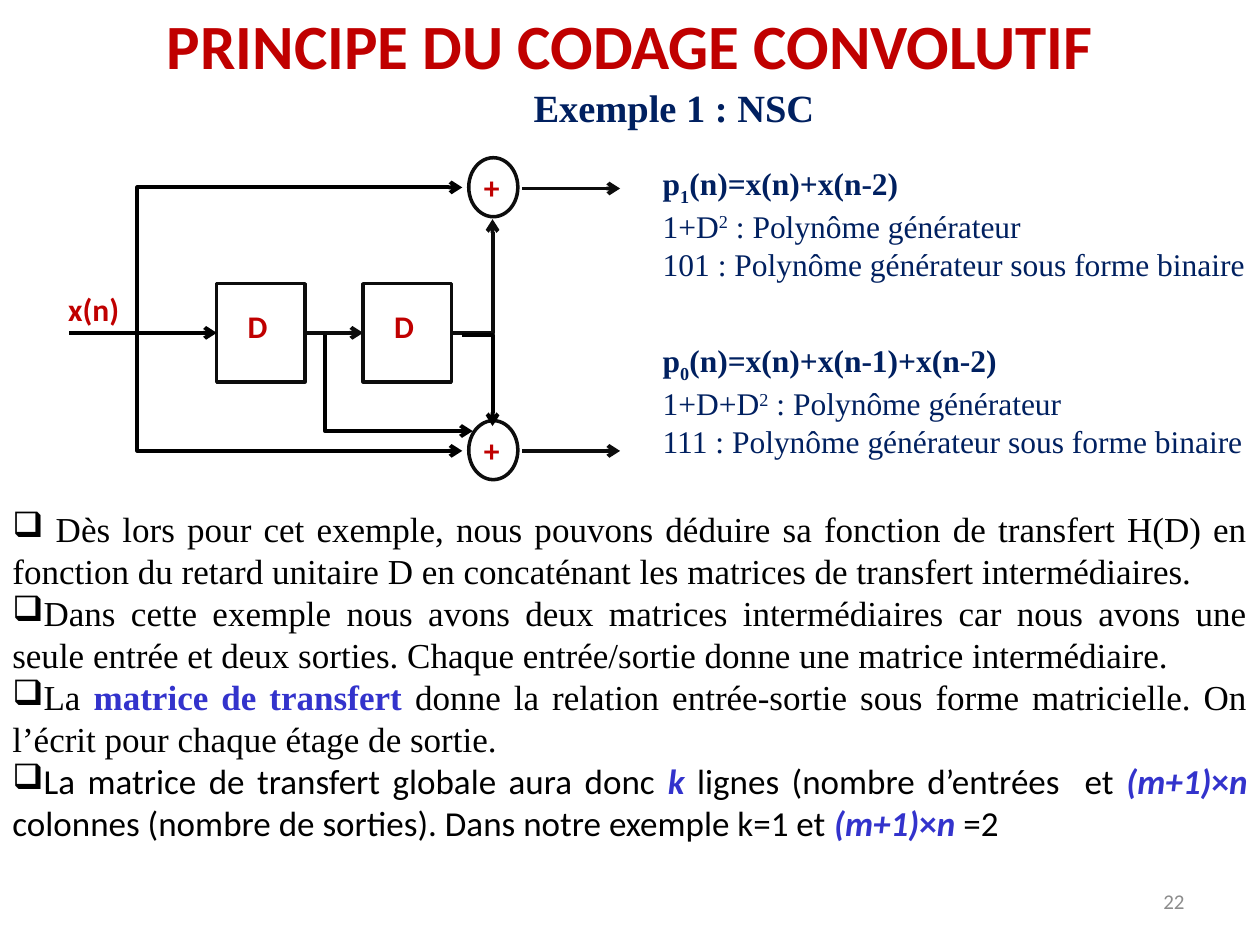
from dataclasses import dataclass
from typing import NamedTuple

from lxml.etree import SubElement
from pptx import Presentation
from pptx.dml.color import RGBColor as Rgb
from pptx.enum.shapes import MSO_CONNECTOR as Link, MSO_SHAPE as Kind
from pptx.enum.text import MSO_ANCHOR as Anchor, MSO_AUTO_SIZE as Fit, PP_ALIGN as Align
from pptx.oxml.ns import qn
from pptx.util import Cm, Pt


@dataclass(frozen=True)
class Theme:
    red: str = "C00000"
    navy: str = "002060"
    blue: str = "3333CC"
    black: str = "000000"
    ink: str = "0D0D0D"
    gray: str = "8C8C8C"
    sans: str = "Calibri"
    serif: str = "Times New Roman"
    title: int = 36
    head: int = 22
    body: int = 20
    label: int = 18
    foot: int = 12
    edge: float = 2
    wire: float = 2.25


class Box(NamedTuple):
    x: float
    y: float
    w: float
    h: float

    def cm(self) -> list:
        return [Cm(v) for v in self]


class Style(NamedTuple):
    font: str
    size: int
    color: str
    bold: bool = False
    align: Align = Align.CENTER


class Bit(NamedTuple):
    """A piece of a paragraph; base is its baseline shift in percent."""
    text: str
    bold: bool = False
    italic: bool = False
    color: str = ""
    base: int = 0


class Para(NamedTuple):
    bits: list[Bit]
    font: str = ""
    bullet: str = ""


class Wire(NamedTuple):
    """An arrow; turn is "" (straight), "up" (vertical first) or "side"."""
    x1: float
    y1: float
    x2: float
    y2: float
    color: str
    turn: str = ""


T = Theme()
TITLE = Style(T.sans, T.title, T.red, True)
HEAD = Style(T.serif, T.head, T.navy, True)
LABEL = Style(T.sans, T.label, T.red, True)
RULE = Style(T.serif, T.label, T.navy, align=Align.LEFT)
BODY = Style(T.serif, T.body, T.black, align=Align.JUSTIFY)
FOOT = Style(T.sans, T.foot, T.gray, align=Align.RIGHT)

MID = 6.71
DELAYS = (4.37, 7.32)
SUMS = (3.18, 8.48)
TAP = 2.77
SUM_X = 9.93
IN_X = 9.32
EXITS = (3.8, 9.09)

WIRES = [
    *(Wire(10.52, y, 12.5, y, T.ink) for y in EXITS),
    Wire(TAP, MID, IN_X, 3.78, T.black, "up"),
    Wire(TAP, MID, IN_X, 9.09, T.black, "up"),
    Wire(6.55, MID, 9.53, 8.69, T.black, "up"),
    Wire(9.12, MID, SUM_X, 4.42, T.ink, "side"),
    Wire(IN_X, 6.76, SUM_X, 8.59, T.black, "side"),
]


def frame(slide, box: Box):
    tf = slide.shapes.add_textbox(*box.cm()).text_frame
    tf.word_wrap = True
    tf.auto_size = Fit.SHAPE_TO_FIT_TEXT
    return tf


def ink(font, style: Style) -> None:
    font.name, font.size, font.bold = style.font, Pt(style.size), style.bold
    font.color.rgb = Rgb.from_string(style.color)


def label(slide, box: Box, text: str, style: Style):
    tf = frame(slide, box)
    tf.text = text
    para = tf.paragraphs[0]
    para.alignment = style.align
    ink(para.runs[0].font, style)
    return tf


def rich(slide, box: Box, paras: list[Para], style: Style) -> None:
    tf = frame(slide, box)
    for i, item in enumerate(paras):
        para = tf.add_paragraph() if i else tf.paragraphs[0]
        para.alignment = style.align
        if item.bullet:
            props = para._p.get_or_add_pPr()
            props.set("marL", "0")
            props.set("indent", "0")
            SubElement(props, qn("a:buChar")).set("char", item.bullet)
        for bit in item.bits:
            run = para.add_run()
            run.text = bit.text
            ink(run.font, style._replace(font=item.font or style.font,
                                         color=bit.color or style.color, bold=bit.bold))
            run.font.italic = bit.italic
            if bit.base:
                run._r.get_or_add_rPr().set("baseline", str(bit.base * 1000))


def node(slide, kind: Kind, box: Box):
    shape = slide.shapes.add_shape(kind, *box.cm())
    shape.shadow.inherit = False
    shape.fill.background()
    shape.line.color.rgb = Rgb.from_string(T.ink)
    shape.line.width = Pt(T.edge)
    return shape


def draw(slide, wire: Wire):
    kind = Link.ELBOW if wire.turn else Link.STRAIGHT
    line = slide.shapes.add_connector(kind, *(Cm(v) for v in wire[:4]))
    line.line.color.rgb = Rgb.from_string(wire.color)
    line.line.width = Pt(T.wire)
    props = line._element.spPr
    geom = props.find(qn("a:prstGeom"))
    if wire.turn == "side":
        geom.set("prst", "bentConnector2")
    elif wire.turn == "up":
        guide = SubElement(geom.get_or_add_avLst(), qn("a:gd"))
        guide.set("name", "adj1")
        guide.set("fmla", "val 0")
    SubElement(props.find(qn("a:ln")), qn("a:tailEnd")).set("type", "arrow")
    SubElement(props, qn("a:effectLst"))
    return line


def rule(slide, box: Box, sub: str, law: str, poly: str, code: str) -> None:
    """Write one output equation, its polynomial and its binary form."""
    rich(slide, box, [
        Para([Bit("p", True), Bit(sub, True, base=-25), Bit(law, True)]),
        Para([Bit(poly), Bit("2", base=30), Bit(" : Polynôme générateur")]),
        Para([Bit(f"{code} : Polynôme générateur sous forme binaire")]),
    ], RULE)


def circuit(slide) -> None:
    cells = [node(slide, Kind.RECTANGLE, Box(x, 5.72, 1.78, 1.98)) for x in DELAYS]
    for x in DELAYS:
        label(slide, Box(x - 0.37, 6.07, 2.39, 1.02), "D", LABEL)
    for y in SUMS:
        node(slide, Kind.OVAL, Box(9.45, y, 0.99, 1.19))
        label(slide, Box(IN_X, y + 0.09, 1.19, 1.02), "+", LABEL)
    label(slide, Box(0.2, 5.72, 3.38, 1.02), "x(n)", LABEL)
    for wire in WIRES:
        draw(slide, wire)
    feed = draw(slide, Wire(1.4, MID, DELAYS[0], MID, T.black))
    feed.end_connect(cells[0], 1)
    step = draw(slide, Wire(6.15, MID, DELAYS[1], MID, T.ink))
    step.begin_connect(cells[0], 3)
    step.end_connect(cells[1], 1)


def notes() -> list[Para]:
    def key(text: str, italic: bool = True) -> Bit:
        return Bit(text, True, italic, T.blue)

    size = [key("(m+1)"), key("×", False), key("n ")]
    rows = [
        [Bit(" Dès lors pour cet exemple, nous pouvons déduire sa fonction de transfert H(D) en "
             "fonction du retard unitaire D en concaténant les matrices de transfert intermédiaires.")],
        [Bit("Dans cette exemple nous avons deux matrices intermédiaires car nous avons une seule "
             "entrée et deux sorties. Chaque entrée/sortie donne une matrice intermédiaire.")],
        [Bit("La "), key("matrice de transfert ", False),
         Bit("donne la relation entrée-sortie sous forme matricielle. "
             "On l’écrit pour chaque étage de sortie.")],
        [Bit("La matrice de transfert globale aura donc "), key("k "),
         Bit("lignes (nombre d’entrées  et "), *size,
         Bit("colonnes (nombre de sorties). Dans notre exemple k=1 et "), *size, Bit("=2")],
    ]
    fonts = [T.serif] * 3 + [T.sans]
    return [Para(bits, font, "❑") for bits, font in zip(rows, fonts)]


def main() -> None:
    deck = Presentation()
    deck.slide_width, deck.slide_height = Cm(25.4), Cm(19.05)
    slide = deck.slides.add_slide(deck.slide_layouts[6])
    label(slide, Box(0, 0, 25.4, 1.8), "PRINCIPE DU CODAGE CONVOLUTIF", TITLE)
    label(slide, Box(5.94, 1.57, 15.29, 1.19), "Exemple 1 : NSC", HEAD)
    circuit(slide)
    rule(slide, Box(13.11, 3.18, 12.29, 2.57), "1", "(n)=x(n)+x(n-2)", "1+D", "101")
    rule(slide, Box(13.11, 6.76, 12.29, 3.33), "0", "(n)=x(n)+x(n-1)+x(n-2)", "1+D+D", "111")
    rich(slide, Box(0, 10.11, 25.4, 7.09), notes(), BODY)
    page = label(slide, Box(18.21, 17.65, 5.92, 1.02), "22", FOOT)
    page.auto_size = Fit.NONE
    page.vertical_anchor = Anchor.MIDDLE
    deck.save("out.pptx")


if __name__ == "__main__":
    main()
